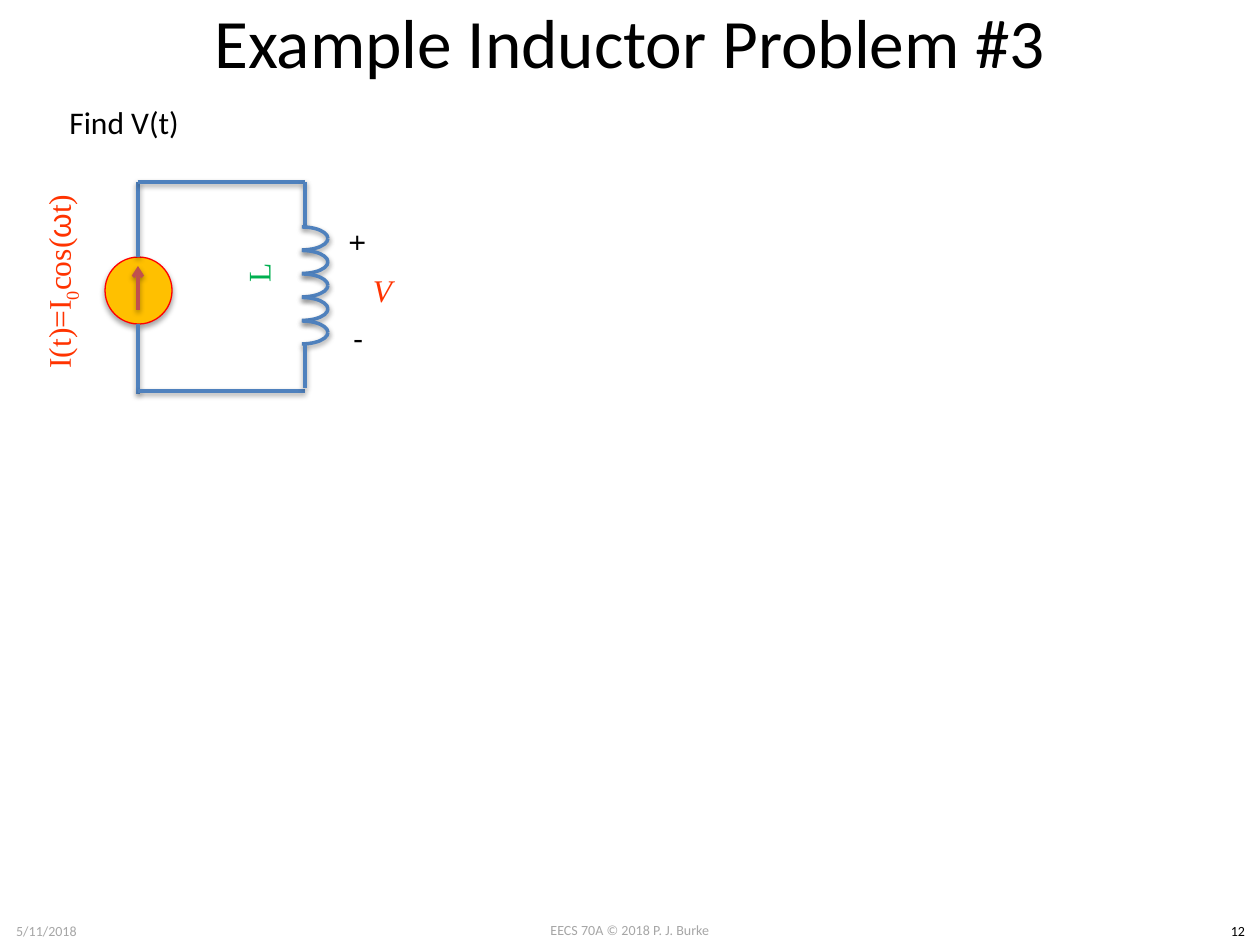
from lxml import etree
from pptx import Presentation
from pptx import util as u
from pptx.dml.color import RGBColor
from pptx.enum import shapes as kinds, text
from pptx.oxml.ns import qn

PX = 914400 / 126
BLUE, RED, ORANGE_RED = "4F81BD", "C0504D", "FF3300"
BLACK, GREY, GREEN = "000000", "A6A6A6", "00B050"
SERIF = "Times New Roman"


def px(*lengths):
    return [u.Emu(round(length * PX)) for length in lengths]


def color(code):
    return RGBColor.from_string(code)


def add_shadow(shape, opacity=38, distance=1.6):
    """Give the shape a soft shadow that falls straight down."""
    effects = etree.SubElement(shape.element.spPr, qn("a:effectLst"))
    shadow = etree.SubElement(
        effects, qn("a:outerShdw"), blurRad=str(u.Pt(3.1)),
        dist=str(u.Pt(distance)), dir="5400000", rotWithShape="0")
    tone = etree.SubElement(shadow, qn("a:srgbClr"), val=BLACK)
    etree.SubElement(tone, qn("a:alpha"), val=str(opacity * 1000))


def set_line(shape, code, width=2):
    shape.line.color.rgb = color(code)
    shape.line.width = u.Pt(width)


def add_wire(shapes, start, end, code=BLUE, arrow=False):
    wire = shapes.add_connector(
        kinds.MSO_CONNECTOR.STRAIGHT, *px(*start, *end))
    set_line(wire, code)
    if arrow:
        etree.SubElement(wire.line._get_or_add_ln(), qn("a:tailEnd"), type="arrow")
    add_shadow(wire)


def add_source(shapes, place):
    circle = shapes.add_shape(kinds.MSO_SHAPE.OVAL, *px(*place))
    circle.fill.solid()
    circle.fill.fore_color.rgb = color("FFC000")
    set_line(circle, "FF0000", 0.75)
    add_shadow(circle, opacity=35, distance=1.8)


def add_arc(shapes, place, flipped):
    arc = shapes.add_shape(kinds.MSO_SHAPE.ARC, *px(*place))
    arc.fill.background()
    set_line(arc, BLUE)
    if flipped:
        arc.element.spPr.xfrm.set("flipV", "1")
    add_shadow(arc)


def add_text(shapes, place, spans, size=18, code=BLACK, font="Calibri",
             centred=True, middle=False, wrap=True, turn=0):
    """Add one paragraph; each span is a text with its own format values."""
    box = shapes.add_textbox(*px(*place))
    box.rotation = turn
    frame = box.text_frame
    frame.word_wrap = wrap
    if middle:
        frame.vertical_anchor = text.MSO_ANCHOR.MIDDLE
    para = frame.paragraphs[0]
    if centred:
        para.alignment = text.PP_ALIGN.CENTER
    for words, own in spans:
        span = para.add_run()
        span.text = words
        span.font.color.rgb = color(code)
        values = {"size": u.Pt(size), "name": font, **own}
        baseline = values.pop("baseline", None)
        for name, value in values.items():
            setattr(span.font, name, value)
        if baseline:
            span._r.get_or_add_rPr().set("baseline", str(baseline * 1000))


def add_inductor(page):
    parts = page.shapes.add_group_shape().shapes
    # Leads and five turns, each made of two quarter arcs
    add_wire(parts, (305, 227), (305, 182))
    for turn in range(5):
        for flipped in (False, True):
            add_arc(parts, (276, 227 + 23.5 * turn, 52, 23), flipped)
    add_wire(parts, (305, 388), (305, 344))
    # Polarity and labels
    sign = {"centred": False, "wrap": False}
    label = {"font": SERIF, "middle": True}
    add_text(parts, (339, 219, 42, 50), [("+", {})], turn=90, **sign)
    add_text(parts, (341, 313, 35, 50), [("-", {})], **sign)
    add_text(parts, (334, 251, 97, 77), [("V", {"italic": True})],
             code=ORANGE_RED, **label)
    add_text(parts, (183, 227, 150, 92), [("L", {})],
             code=GREEN, turn=270, **label)


def main():
    deck = Presentation()
    deck.slide_width, deck.slide_height = px(1260, 945)
    page = deck.slides.add_slide(deck.slide_layouts[6])
    shapes = page.shapes

    # Footer
    for place, words, code in (
            ((483, 915, 294, 30), "EECS 70A © 2018 P. J. Burke", GREY),
            ((0, 916, 93, 30), "5/11/2018", GREY),
            ((1216, 916, 44, 30), "12", BLACK)):
        add_text(shapes, place, [(words, {})], size=8, code=code)

    # Title and task
    add_text(shapes, (63, 0, 1134, 82), [("Example Inductor Problem #3", {})],
             size=39.6, middle=True)
    add_text(shapes, (57, 97, 136, 50), [("Find V(t)", {})],
             centred=False, wrap=False)

    # Current source
    add_source(shapes, (105, 257, 67, 67))
    add_wire(shapes, (138, 310), (138, 266), RED, arrow=True)
    add_text(shapes, (-72, 243, 266, 77),
             [("I(t)=I", {}), ("0", {"baseline": -25}), ("cos(", {}),
              ("ω", {"name": "Arial"}), ("t)", {})],
             code=ORANGE_RED, font=SERIF, middle=True, turn=270)

    # Circuit wires
    for start, end in (((138, 257), (138, 182)), ((138, 324), (138, 394)),
                       ((138, 182), (305, 182)), ((138, 391), (305, 391))):
        add_wire(shapes, start, end)

    add_inductor(page)
    deck.save("out.pptx")


if __name__ == "__main__":
    main()
